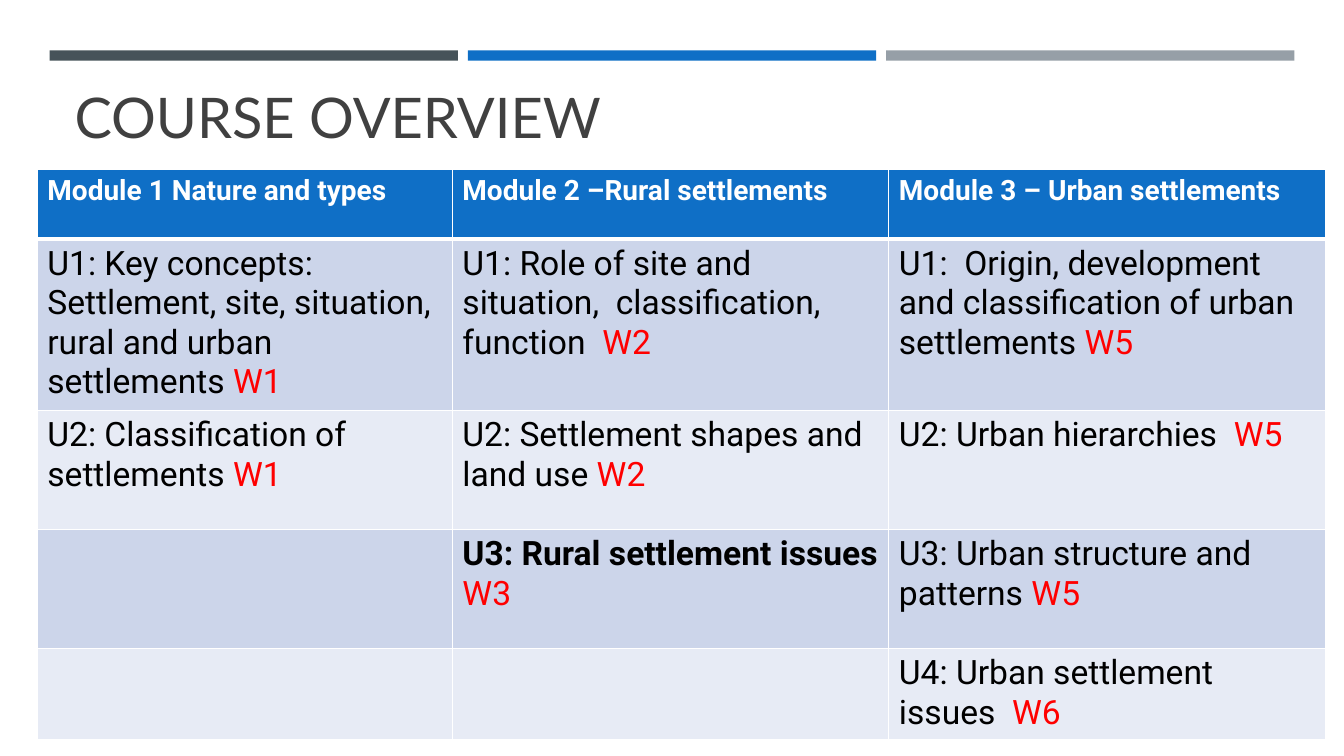
from lxml import etree
from pptx import Presentation
from pptx import util as u
from pptx.dml.color import RGBColor
from pptx.enum import shapes, text
from pptx.oxml import ns

WHITE = RGBColor(0xFF, 0xFF, 0xFF)
BLACK = RGBColor(0x00, 0x00, 0x00)
RED = RGBColor(0xFF, 0x00, 0x00)
CHARCOAL = RGBColor(0x40, 0x40, 0x40)
SLATE = RGBColor(0x46, 0x53, 0x59)
BLUE = RGBColor(0x0F, 0x6F, 0xC6)
GREY = RGBColor(0x96, 0x9F, 0xA7)
BANDS = [RGBColor(0xCC, 0xD5, 0xEA), RGBColor(0xE7, 0xEB, 0xF5)]

TITLE = "COURSE OVERVIEW"
MODULES = [
    "Module 1 Nature and types",
    "Module 2 –Rural settlements",
    "Module 3 – Urban settlements",
]
# Each unit is its topic and its week; None leaves the cell empty.
UNITS = [
    [("U1: Key concepts: Settlement, site, situation, rural and urban settlements ", "W1"),
     ("U1: Role of site and situation,  classification, function  ", "W2"),
     ("U1:  Origin, development and classification of urban settlements ", "W5")],
    [("U2: Classification of settlements ", "W1"),
     ("U2: Settlement shapes and land use ", "W2"),
     ("U2: Urban hierarchies ", " W5")],
    [None,
     ("U3: Rural settlement issues ", "W3"),
     ("U3: Urban structure and patterns ", "W5")],
    [None,
     None,
     ("U4: Urban settlement issues ", " W6")],
]
BOLD_TOPICS = {"U3: Rural settlement issues "}

BAR_COLOURS = [SLATE, BLUE, GREY]
BAR_LEFT, BAR_TOP, BAR_WIDTH, BAR_HEIGHT, BAR_PITCH = 1.25, 1.27, 10.29, 0.26, 10.54
TABLE_LEFT, TABLE_TOP = 0.94, 4.27
COLUMN_WIDTHS = [10.46, 11, 11]
ROW_HEIGHTS = [1.75, 4.29, 3, 3, 2.25]


def add_span(para, words, size, colour, font="Roboto", bold=False):
    span = para.add_run()
    span.text = words
    span.font.name = font
    span.font.size = u.Pt(size)
    span.font.bold = bold
    span.font.color.rgb = colour


def style_cell(cell, colour, top, bottom):
    """Fill the cell and give it white borders; top and bottom are in points."""
    cell.fill.solid()
    cell.fill.fore_color.rgb = colour
    properties = cell._tc.get_or_add_tcPr()
    widths = {"lnL": 1, "lnR": 1, "lnT": top, "lnB": bottom}
    for place, (side, width) in enumerate(widths.items()):
        line = etree.Element(ns.qn(f"a:{side}"), w=str(u.Pt(width)))
        fill = etree.SubElement(line, ns.qn("a:solidFill"))
        etree.SubElement(fill, ns.qn("a:srgbClr"), val=str(WHITE))
        properties.insert(place, line)


def add_bars(page):
    for index, colour in enumerate(BAR_COLOURS):
        bar = page.shapes.add_shape(
            shapes.MSO_SHAPE.RECTANGLE,
            u.Cm(BAR_LEFT + index * BAR_PITCH), u.Cm(BAR_TOP),
            u.Cm(BAR_WIDTH), u.Cm(BAR_HEIGHT))
        bar.shadow.inherit = False
        bar.fill.solid()
        bar.fill.fore_color.rgb = colour
        bar.line.fill.background()


def add_title(page):
    box = page.shapes.add_textbox(u.Cm(1.63), u.Cm(1.6), u.Cm(30.63), u.Cm(2.29))
    frame = box.text_frame
    frame.word_wrap = True
    frame.vertical_anchor = text.MSO_ANCHOR.BOTTOM
    add_span(frame.paragraphs[0], TITLE, 40, CHARCOAL, font="Lato")


def add_overview(page):
    table = page.shapes.add_table(
        len(ROW_HEIGHTS), len(COLUMN_WIDTHS), u.Cm(TABLE_LEFT), u.Cm(TABLE_TOP),
        u.Cm(sum(COLUMN_WIDTHS)), u.Cm(sum(ROW_HEIGHTS))).table
    table.horz_banding = False
    for column, width in zip(table.columns, COLUMN_WIDTHS):
        column.width = u.Cm(width)
    for row, height in zip(table.rows, ROW_HEIGHTS):
        row.height = u.Cm(height)

    for column, module in enumerate(MODULES):
        cell = table.cell(0, column)
        style_cell(cell, BLUE, top=1, bottom=3)
        add_span(cell.text_frame.paragraphs[0], module, 20, WHITE, bold=True)

    for row, units in enumerate(UNITS, start=1):
        for column, unit in enumerate(units):
            cell = table.cell(row, column)
            style_cell(cell, BANDS[(row - 1) % 2], top=3 if row == 1 else 1, bottom=1)
            if unit:
                topic, week = unit
                para = cell.text_frame.paragraphs[0]
                add_span(para, topic, 24, BLACK, bold=topic in BOLD_TOPICS)
                add_span(para, week, 24, RED)


def main():
    deck = Presentation()
    deck.slide_width, deck.slide_height = u.Cm(33.87), u.Cm(19.05)
    page = deck.slides.add_slide(deck.slide_layouts[6])
    add_bars(page)
    add_title(page)
    add_overview(page)
    deck.save("out.pptx")


if __name__ == "__main__":
    main()
